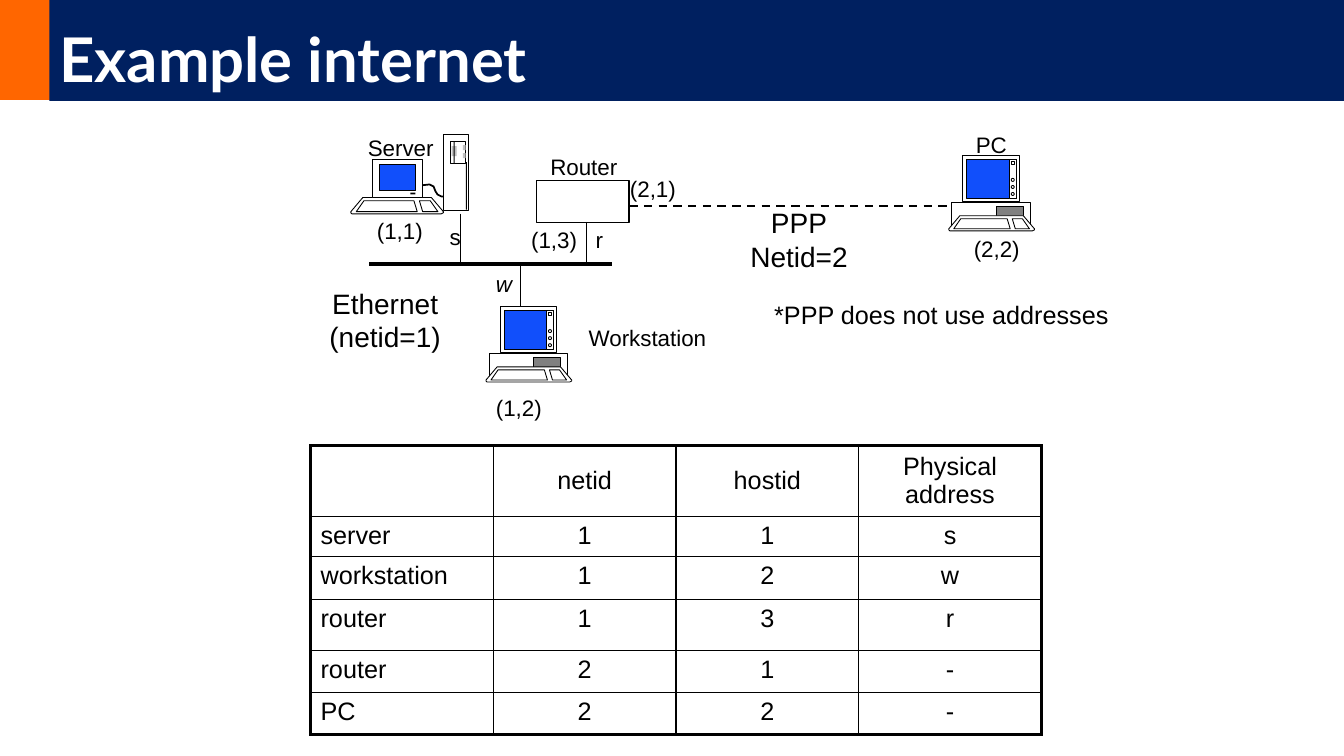
from dataclasses import dataclass

from lxml.etree import SubElement
from pptx import Presentation
from pptx.dml.color import RGBColor as Rgb
from pptx.enum.dml import MSO_LINE as Dash
from pptx.enum.shapes import MSO_CONNECTOR as Link, MSO_SHAPE as Kind
from pptx.enum.text import MSO_ANCHOR as Anchor, MSO_AUTO_SIZE as Fit, PP_ALIGN as Align
from pptx.oxml.ns import qn
from pptx.util import Inches, Pt


@dataclass(frozen=True)
class Theme:
    navy: str = "002060"
    orange: str = "FF6600"
    blue: str = "114FFB"
    black: str = "000000"
    white: str = "FFFFFF"
    gray: str = "808080"
    silver: str = "C0C0C0"
    head: str = "Lato"
    body: str = "Arial"
    title: float = 44
    large: float = 20
    text: float = 18
    small: float = 16
    hair: float = 0.63
    thin: float = 1
    cable: float = 1.25
    dash: float = 1.5
    thick: float = 2.25


T = Theme()
HEAD = ["", "netid", "hostid", "Physical address"]
ROWS = [
    ["server", "1", "1", "s"],
    ["workstation", "1", "2", "w"],
    ["router", "1", "3", "r"],
    ["router", "2", "1", "-"],
    ["PC", "2", "2", "-"],
]
HIGHS = [0.7, 0.4, 0.43, 0.5, 0.42, 0.42]


def paint(shape, fill, line=None, width=T.hair):
    shape.shadow.inherit = False
    if fill:
        shape.fill.solid()
        shape.fill.fore_color.rgb = Rgb.from_string(fill)
    else:
        shape.fill.background()
    if line:
        shape.line.color.rgb = Rgb.from_string(line)
        shape.line.width = Pt(width)
    else:
        shape.line.fill.background()
    return shape


def block(shapes, box, fill, line=T.black, width=T.hair, kind=Kind.RECTANGLE):
    shape = shapes.add_shape(kind, *map(Inches, box))
    return paint(shape, fill, line, width)


def outline(shapes, x, y, points, scale=1, fill=T.white, width=T.hair, close=True):
    spots = [(Inches(x + px * scale), Inches(y + py * scale)) for px, py in points]
    pen = shapes.build_freeform(*spots[0])
    pen.add_line_segments(spots[1:], close=close)
    paint(pen.convert_to_shape(), fill, T.black, width)


def wire(shapes, x1, y1, x2, y2, width=T.thin, dash=None):
    link = shapes.add_connector(Link.STRAIGHT, *map(Inches, (x1, y1, x2, y2)))
    link.line.color.rgb = Rgb.from_string(T.black)
    link.line.width = Pt(width)
    if dash:
        link.line.dash_style = dash
    SubElement(link._element.spPr, qn("a:effectLst"))


def style(frame, size, font=T.body, color=T.black, bold=False, slant=False, align=Align.LEFT):
    for para in frame.paragraphs:
        para.alignment = align
        for run in para.runs:
            run.font.size = Pt(size)
            run.font.name = font
            run.font.bold = bold
            run.font.italic = slant
            run.font.color.rgb = Rgb.from_string(color)


def label(shapes, x, y, wide, text, size=T.small, slant=False):
    lines = text.count("\n") + 1
    high = 0.1 + lines * size / 60
    frame = shapes.add_textbox(*map(Inches, (x, y, wide, high))).text_frame
    frame.word_wrap = False
    frame.auto_size = Fit.SHAPE_TO_FIT_TEXT
    frame.text = text
    style(frame, size, slant=slant, align=Align.CENTER if lines > 1 else Align.LEFT)


def banner(shapes, x, y, wide, high):
    block(shapes, (x, y, 0.5, high), T.orange, None)
    bar = block(shapes, (x + 0.49, y - 0.01, wide - 0.49, high + 0.02), T.navy, None)
    frame = bar.text_frame
    frame.text = "Example internet"
    frame.word_wrap = True
    frame.vertical_anchor = Anchor.BOTTOM
    frame.paragraphs[0].line_spacing = 0.9
    style(frame, T.title, T.head, T.white, bold=True)


def keyboard(shapes, x, y, scale=1):
    outline(shapes, x, y, [(0.11, 0), (0.74, 0), (0.85, 0.13), (0.85, 0.14), (0.83, 0.15),
                           (0.01, 0.15), (0, 0.14), (0, 0.13)], scale)
    outline(shapes, x, y, [(0.12, 0.03), (0.58, 0.03), (0.61, 0.13), (0.05, 0.13)], scale)
    outline(shapes, x, y, [(0.63, 0.03), (0.73, 0.03), (0.8, 0.13), (0.66, 0.13)], scale)


def desktop(shapes, x, y):
    parts = shapes.add_group_shape().shapes
    block(parts, (x + 0.03, y + 0.47, 0.78, 0.24), T.white)
    block(parts, (x + 0.47, y + 0.51, 0.27, 0.11), T.gray)
    keyboard(parts, x, y + 0.6)
    block(parts, (x + 0.14, y, 0.56, 0.46), T.white)
    block(parts, (x + 0.18, y + 0.04, 0.49, 0.39), T.blue)
    block(parts, (x + 0.6, y + 0.04, 0.07, 0.39), T.white)
    block(parts, (x + 0.62, y + 0.06, 0.03, 0.03), T.white)
    for knob in range(3):
        block(parts, (x + 0.62, y + 0.23 + 0.07 * knob, 0.03, 0.03), T.white, kind=Kind.OVAL)


def server(shapes, x, y):
    parts = shapes.add_group_shape().shapes
    cable = [(0.69, 0.51), (0.78, 0.5), (0.8, 0.51), (0.82, 0.52), (0.84, 0.57),
             (0.86, 0.6), (0.88, 0.61), (0.9, 0.62), (0.94, 0.62)]
    outline(parts, x, y, cable, fill=None, width=T.cable, close=False)
    keyboard(parts, x, y + 0.63, 1.08)
    for left, top, wide, high, fill, line in [
        (0.21, 0.25, 0.5, 0.38, T.white, T.black),
        (0.28, 0.3, 0.36, 0.26, T.blue, T.black),
        (0.59, 0.58, 0.05, 0.02, T.black, None),
        (0.92, 0, 0.25, 0.76, T.white, T.black),
        (0.99, 0.07, 0.15, 0.22, T.white, T.black),
        (1.14, 0.28, 0.01, 0.47, T.black, None),
        (1, 0.12, 0.05, 0.1, T.silver, None),
        (1.02, 0.07, 0.01, 0.22, T.black, None),
        (1.11, 0.11, 0.03, 0.05, T.silver, None),
        (1.11, 0.19, 0.03, 0.05, T.silver, None),
    ]:
        block(parts, (x + left, y + top, wide, high), fill, line)


def network(shapes, x, y):
    bus = y + 1.37
    wire(shapes, x + 0.66, bus, x + 3.07, bus, T.thick)
    desktop(shapes, x + 1.82, y + 1.79)
    server(shapes, x + 0.48, y + 0.08)
    wire(shapes, x + 1.57, y + 0.87, x + 1.57, bus)
    wire(shapes, x + 2.16, bus, x + 2.16, y + 1.79)
    block(shapes, (x + 2.32, y + 0.54, 0.92, 0.42), T.white, width=T.thin)
    wire(shapes, x + 2.82, y + 0.95, x + 2.82, bus)
    desktop(shapes, x + 6.41, y + 0.29)
    wire(shapes, x + 3.24, y + 0.79, x + 6.41, y + 0.79, T.dash, Dash.DASH)
    for left, top, wide, text in [
        (0.64, 0.85, 0.66, "(1,1)"),
        (1.36, 0.91, 0.31, "s"),
        (1.82, 2.61, 0.66, "(1,2)"),
        (3.15, 0.44, 0.66, "(2,1)"),
        (2.17, 0.94, 0.66, "(1,3)"),
        (2.81, 0.94, 0.27, "r"),
        (6.56, 1.03, 0.66, "(2,2)"),
        (6.58, 0, 0.51, "PC"),
        (0.55, 0.03, 0.86, "Server"),
        (2.36, 0.22, 0.87, "Router"),
        (2.74, 1.92, 1.38, "Workstation"),
    ]:
        label(shapes, x + left, y + top, wide, text)
    label(shapes, x + 1.82, y + 1.38, 0.36, "w", slant=True)
    label(shapes, x + 4.34, y + 0.74, 1.17, "PPP\nNetid=2", T.large)
    label(shapes, x + 0.07, y + 1.54, 1.5, "Ethernet\n(netid=1)", T.large)
    label(shapes, x + 4.58, y + 1.67, 3.52, "*PPP does not use addresses", T.text)


def border(cell, sides):
    props = cell._tc.get_or_add_tcPr()
    for side, outer in sides:
        width = Pt(T.thick if outer else T.thin)
        edge = SubElement(props, qn(f"a:ln{side}"), w=str(width))
        fill = SubElement(edge, qn("a:solidFill"))
        SubElement(fill, qn("a:srgbClr"), val=T.black)


def hosts(shapes, x, y, wide):
    data = [HEAD] + ROWS
    rows, cols = len(data), len(HEAD)
    box = map(Inches, (x, y, wide, sum(HIGHS)))
    table = shapes.add_table(rows, cols, *box).table
    table.first_row = table.horz_banding = False
    for col in table.columns:
        col.width = Inches(wide / cols)
    for r, values in enumerate(data):
        table.rows[r].height = Inches(HIGHS[r])
        for c, value in enumerate(values):
            cell = table.cell(r, c)
            cell.text = value
            cell.vertical_anchor = Anchor.TOP if r else Anchor.MIDDLE
            style(cell.text_frame, T.text, align=Align.CENTER if c else Align.LEFT)
            border(cell, [("L", c == 0), ("R", c == cols - 1),
                          ("T", r == 0), ("B", r == rows - 1)])
            cell.fill.background()


def main():
    deck = Presentation()
    deck.slide_width, deck.slide_height = Inches(13.33), Inches(7.5)
    shapes = deck.slides.add_slide(deck.slide_layouts[6]).shapes
    banner(shapes, 0, 0, 13.33, 0.99)
    network(shapes, 3, 1.25)
    hosts(shapes, 3.08, 4.42, 7.25)
    deck.save("out.pptx")


if __name__ == "__main__":
    main()
